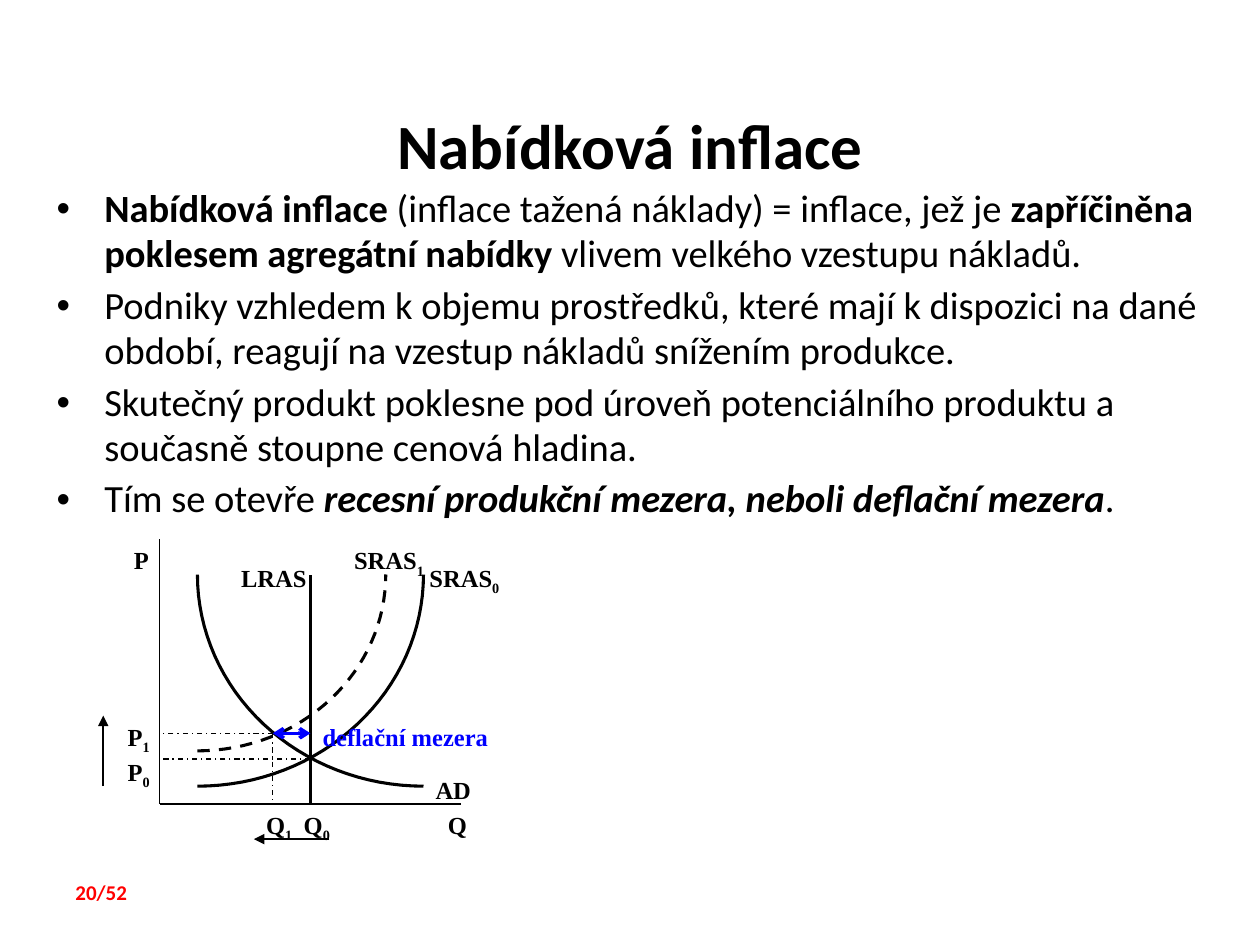
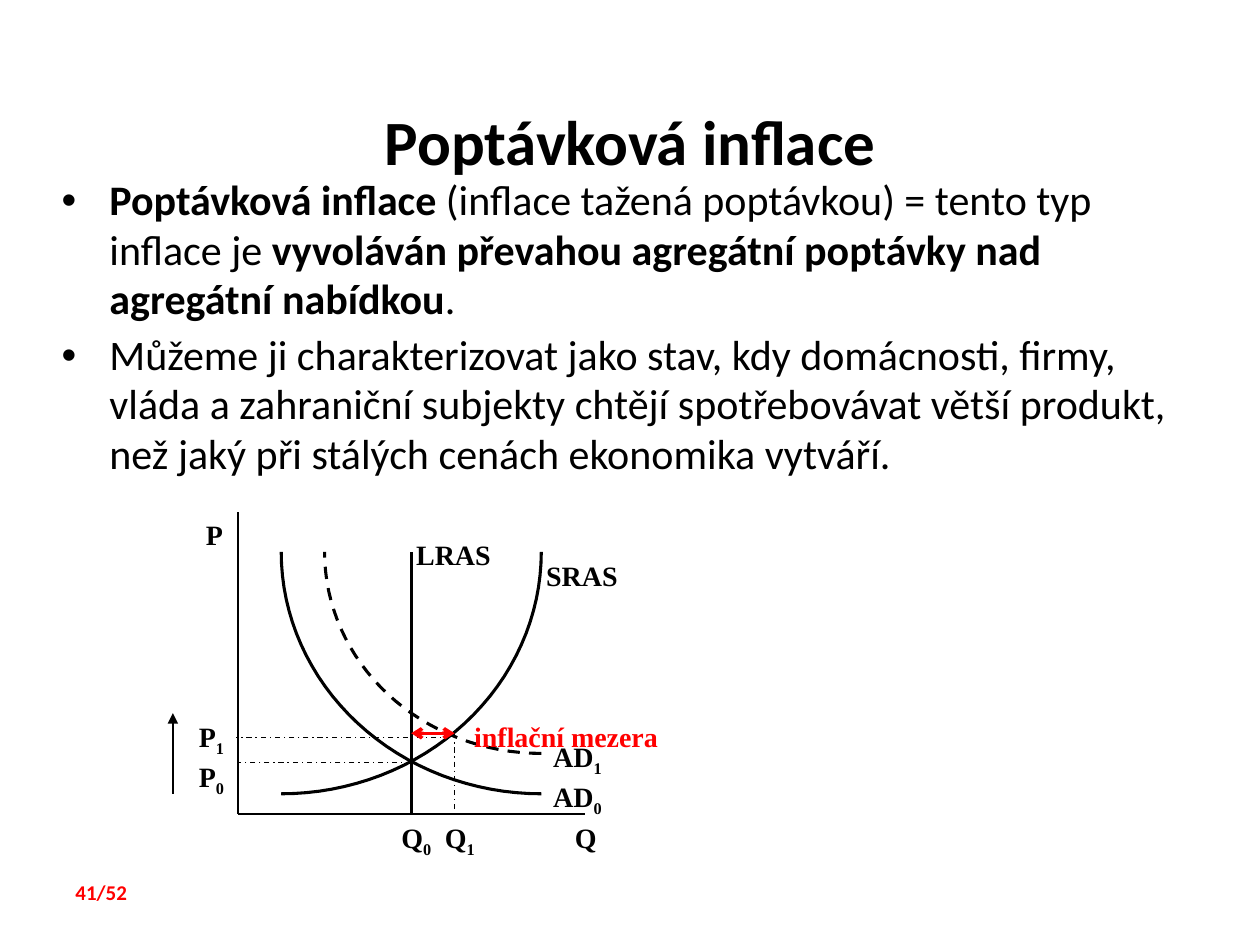
"""Build two slides on supply-side and demand-side inflation."""
from dataclasses import dataclass
from math import cos, pi, sin
from typing import Any, NamedTuple

from lxml.etree import SubElement as Sub
from pptx import Presentation
from pptx.dml.color import RGBColor
from pptx.enum.dml import MSO_LINE_DASH_STYLE as Dash
from pptx.enum.shapes import MSO_CONNECTOR as Link
from pptx.enum.text import MSO_ANCHOR as Anchor, PP_ALIGN as Align
from pptx.oxml.ns import qn
from pptx.util import Inches, Pt

BLACK, RED, BLUE = "000000", "FF0000", "0000FF"
SANS, SERIF = "Calibri", "Times New Roman"
TITLE = {"name": SANS, "size": Pt(36), "bold": True}
FOOT = {"name": SANS, "size": Pt(12), "bold": True}
PLAIN: dict[str, Any] = {"bold": False}
BOLD: dict[str, Any] = {"bold": True}
SLANT: dict[str, Any] = {"bold": True, "italic": True}
STEPS = 32


class Grid(NamedTuple):
    left: float
    top: float
    dx: float
    dy: float
    size: int

    def spot(self, x: float, y: float) -> tuple[int, int]:
        """Turn grid units into a place on the slide."""
        return Inches(self.left + x * self.dx), Inches(self.top + y * self.dy)


class Label(NamedTuple):
    text: str
    x: float
    y: float
    wide: float
    pad: int
    sub: str = ""
    color: str = BLACK
    high: float = 2


class Line(NamedTuple):
    start: tuple[float, float]
    end: tuple[float, float]
    width: float = 0.75
    dash: Any = None
    head: str = ""
    tail: str = ""
    color: str = BLACK


class Curve(NamedTuple):
    left: float
    right: float
    low: float
    falls: bool
    dash: Any = None


class Run(NamedTuple):
    text: str
    style: dict[str, Any] = PLAIN


@dataclass
class Page:
    title: str
    box: tuple[float, float, float, float]
    body: tuple[float, float, float, float]
    size: int
    points: list[list[Run]]
    number: str
    grid: Grid
    labels: list[Label]
    lines: list[Line]
    curves: list[Curve]


LABELS = [
    Label("P", 0, 0, 5, 6),
    Label("P", 0, 12, 5, 5, "0"),
    Label("P", 0, 10, 5, 5, "1"),
]
LINES = [
    Line((4, 15), (20, 15)),
    Line((4, 15), (4, 0)),
    Line((12, 15), (12, 2), 1.5),
    Line((12, 12.45), (4, 12.45), dash=Dash.DASH_DOT),
    Line((1, 14), (1, 10), 1.25, tail="triangle"),
]
CURVES = [Curve(6, 18, 14, True), Curve(6, 18, 14, False)]

PAGES = [
    Page(
        "Nabídková inflace", (0.5, 0.52, 9, 1.25), (0.23, 1.43, 9.45, 5.29), 22,
        [
            [Run("Nabídková inflace", BOLD),
             Run(" (inflace tažená náklady) = inflace, jež je "),
             Run("zapříčiněna poklesem agregátní nabídky ", BOLD),
             Run("vlivem velkého vzestupu nákladů.")],
            [Run("Podniky vzhledem k objemu prostředků, které mají k dispozici na dané "
                 "období, reagují na vzestup nákladů snížením produkce.")],
            [Run("Skutečný produkt poklesne pod úroveň potenciálního produktu a "
                 "současně stoupne cenová hladina.")],
            [Run("Tím se otevře"),
             Run(" recesní produkční mezera, neboli deflační mezera", SLANT), Run(".")],
        ],
        "20/52", Grid(0.67, 4.28, 0.1495, 0.14, 14),
        [
            Label("LRAS", 7, 1, 6, 2),
            Label("SRAS", 17, 1, 6, 2, "0"),
            Label("SRAS", 13, 0, 6, 2, "1"),
            Label("AD", 17, 13, 6, 3),
            Label("Q", 10, 15, 4, 3, "0", high=3),
            Label("Q", 8, 15, 4, 3, "1", high=3),
            Label("Q", 17, 15, 4, 5),
            Label("deflační mezera", 11, 10, 15, 3, color=BLUE),
        ],
        [
            Line((10, 11), (4, 11), dash=Dash.DASH_DOT),
            Line((10, 11), (10, 15), dash=Dash.DASH_DOT),
            Line((10, 11), (12, 11), 2, head="arrow", tail="arrow", color=BLUE),
            Line((13, 17), (9, 17), 1.25, tail="triangle"),
        ],
        [Curve(6, 16, 12, False, Dash.DASH)],
    ),
    Page(
        "Poptávková inflace", (0.5, 0.34, 9, 1.55), (0.27, 1.35, 9.45, 5.74), 24,
        [
            [Run("Poptávková inflace", BOLD),
             Run(" (inflace tažená poptávkou) = tento typ inflace je "),
             Run("vyvoláván převahou agregátní poptávky nad agregátní nabídkou", BOLD),
             Run(".")],
            [Run("Můžeme ji charakterizovat jako stav, kdy domácnosti, firmy, vláda a "
                 "zahraniční subjekty chtějí spotřebovávat větší produkt, než jaký při "
                 "stálých cenách ekonomika vytváří.")],
        ],
        "41/52", Grid(1.2, 4.06, 0.172, 0.16, 16),
        [
            Label("LRAS", 11, 1, 6, 2),
            Label("SRAS", 17, 2, 6, 2),
            Label("AD", 17, 11, 6, 3, "1"),
            Label("AD", 17, 13, 6, 3, "0"),
            Label("Q", 10, 15, 4, 3, "0"),
            Label("Q", 12, 15, 4, 3, "1"),
            Label("Q", 18, 15, 4, 3),
            Label("inflační mezera", 14, 10, 15, 1, color=RED),
        ],
        [
            Line((13.8, 11.2), (3.9, 11.2), dash=Dash.DASH_DOT),
            Line((14, 11), (14, 15), dash=Dash.DASH_DOT),
            Line((12, 11), (14, 11), 2, head="arrow", tail="arrow", color=RED),
        ],
        [Curve(8, 18, 12, True, Dash.DASH)],
    ),
]


def paint(color: str) -> RGBColor:
    """Turn a hex string into a colour."""
    return RGBColor.from_string(color)


def write(para: Any, text: str, style: dict[str, Any], color: str = BLACK) -> Any:
    """Add a run with the given format values."""
    run = para.add_run()
    run.text = text
    for key, value in style.items():
        setattr(run.font, key, value)
    run.font.color.rgb = paint(color)
    return run


def add_box(slide: Any, place: Any) -> Any:
    """Add a wrapping text box and return it."""
    box = slide.shapes.add_textbox(*place)
    box.text_frame.word_wrap = True
    return box


def add_title(slide: Any, page: Page) -> None:
    """Place and format the title."""
    shape = slide.shapes.title
    place = zip(("left", "top", "width", "height"), page.box)
    for key, value in place:
        setattr(shape, key, Inches(value))
    frame = shape.text_frame
    frame.vertical_anchor = Anchor.MIDDLE
    para = frame.paragraphs[0]
    para.alignment = Align.CENTER
    write(para, page.title, TITLE)


def add_body(slide: Any, page: Page) -> None:
    """Write the bullet points."""
    frame = add_box(slide, map(Inches, page.body)).text_frame
    base = {"name": SANS, "size": Pt(page.size)}
    for i, point in enumerate(page.points):
        para = frame.add_paragraph() if i else frame.paragraphs[0]
        para.line_spacing = 0.98
        para.space_before = Pt(3.6 if i else 0)
        props = para._p.get_or_add_pPr()
        props.set("marL", str(Inches(0.5)))
        props.set("indent", str(Inches(-0.38)))
        Sub(Sub(props, qn("a:buClr")), qn("a:srgbClr"), val=BLACK)
        Sub(props, qn("a:buFont"), typeface="Arial")
        Sub(props, qn("a:buChar"), char="•")
        for run in point:
            write(para, run.text, base | run.style)


def add_label(slide: Any, grid: Grid, label: Label) -> Any:
    """Add a graph label with its subscript."""
    size = Inches(label.wide * grid.dx), Inches(label.high * grid.dy)
    box = add_box(slide, (*grid.spot(label.x, label.y), *size))
    frame = box.text_frame
    frame.margin_left = Inches(0.1 + label.pad * grid.size / 288)
    frame.margin_right = 0
    style = {"name": SERIF, "size": Pt(grid.size), "bold": True}
    write(frame.paragraphs[0], label.text, style, label.color)
    if label.sub:
        run = write(frame.paragraphs[0], label.sub, style, label.color)
        run._r.get_or_add_rPr().set("baseline", "-25000")
    return box


def find_side(label: Label, point: tuple[float, float]) -> int | None:
    """Find the side of a label whose middle is at a point."""
    x, y, half, mid = label.x, label.y, label.wide / 2, label.high / 2
    sides = [(x + half, y), (x, y + mid),
             (x + half, y + label.high), (x + label.wide, y + mid)]
    return sides.index(point) if point in sides else None


def add_line(slide: Any, grid: Grid, line: Line, boxes: list[tuple[Label, Any]]) -> None:
    """Draw a line and join it to the labels it meets."""
    shape = slide.shapes.add_connector(
        Link.STRAIGHT, *grid.spot(*line.start), *grid.spot(*line.end))
    Sub(shape._element.spPr, qn("a:effectLst"))
    stroke(shape, line.width, line.dash, line.color)
    for tag, kind in (("a:headEnd", line.head), ("a:tailEnd", line.tail)):
        if kind:
            Sub(shape.line._get_or_add_ln(), qn(tag), type=kind)
    for label, box in boxes:
        for point, join in ((line.start, shape.begin_connect), (line.end, shape.end_connect)):
            side = find_side(label, point)
            if side is not None:
                join(box, side)


def stroke(shape: Any, width: float, dash: Any, color: str = BLACK) -> None:
    """Set the pen of a shape."""
    shape.line.color.rgb = paint(color)
    shape.line.width = Pt(width)
    if dash:
        shape.line.dash_style = dash


def add_curve(slide: Any, grid: Grid, curve: Curve) -> None:
    """Draw a quarter of an ellipse."""
    span, drop = curve.right - curve.left, curve.low - 2
    hub, sign = (curve.right, -1) if curve.falls else (curve.left, 1)
    turns = [pi / 2 * i / STEPS for i in range(STEPS + 1)]
    dots = [grid.spot(hub + sign * span * sin(t), 2 + drop * cos(t)) for t in turns]
    form = slide.shapes.build_freeform(*dots[0])
    form.add_line_segments(dots[1:], close=False)
    shape = form.convert_to_shape()
    shape.shadow.inherit = False
    shape.fill.background()
    stroke(shape, 1.75, curve.dash)


def add_page(deck: Any, page: Page) -> None:
    """Build one slide."""
    slide = deck.slides.add_slide(deck.slide_layouts[5])
    add_title(slide, page)
    add_body(slide, page)
    foot = add_box(slide, map(Inches, (0.5, 6.93, 0.92, 0.3)))
    write(foot.text_frame.paragraphs[0], page.number, FOOT, RED)
    for curve in CURVES + page.curves:
        add_curve(slide, page.grid, curve)
    boxes = [(label, add_label(slide, page.grid, label)) for label in LABELS + page.labels]
    for line in LINES + page.lines:
        add_line(slide, page.grid, line, boxes)


def main() -> None:
    """Build and save the deck."""
    deck = Presentation()
    deck.slide_width, deck.slide_height = Inches(10), Inches(7.5)
    for page in PAGES:
        add_page(deck, page)
    deck.save("out.pptx")


if __name__ == "__main__":
    main()
